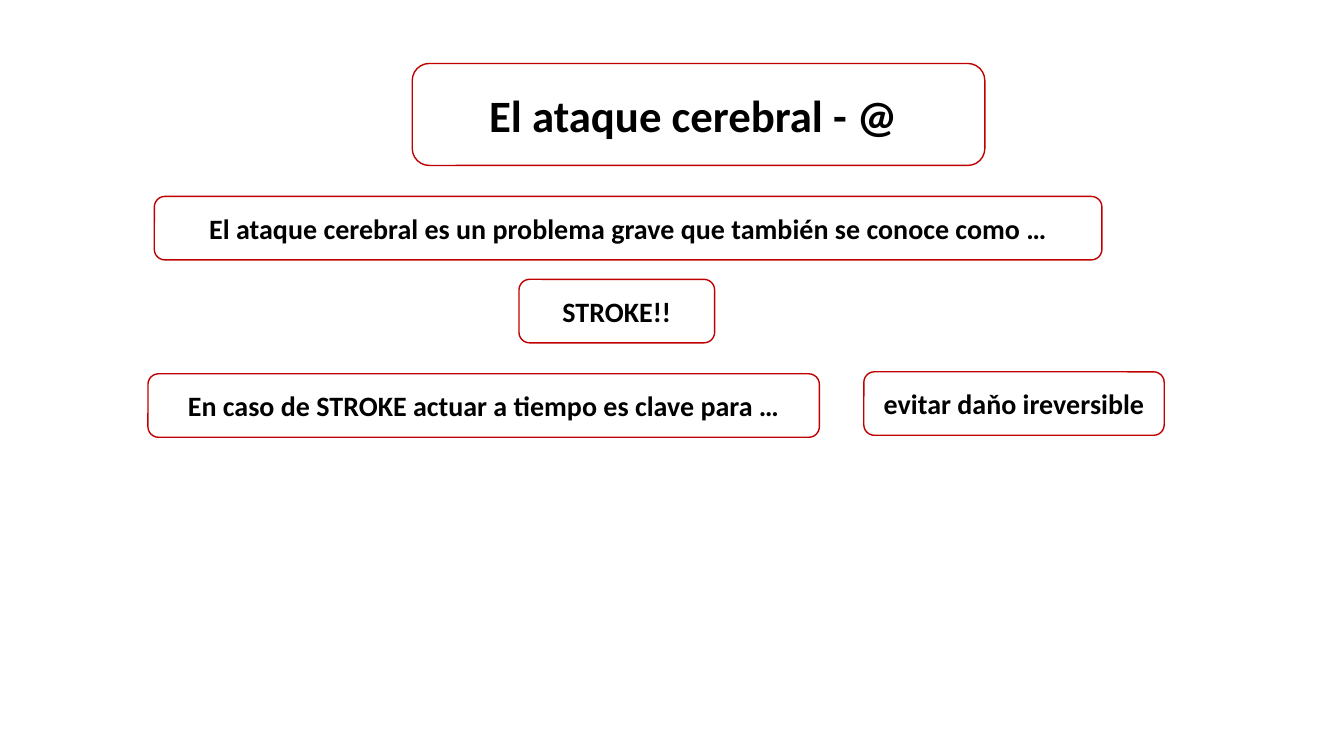
"""Build the slide on recognising and acting on a stroke."""
import pptx
import pptx.dml.color
import pptx.enum.shapes
import pptx.enum.text
import pptx.util
from pptx.util import Cm

THEME = {
    "font": "Calibri",
    "ink": pptx.dml.color.RGBColor.from_string("000000"),
    "paper": pptx.dml.color.RGBColor.from_string("FFFFFF"),
    "border": pptx.dml.color.RGBColor.from_string("C00000"),
    "border_width": pptx.util.Pt(1),
    "title": pptx.util.Pt(32),
    "body": pptx.util.Pt(20),
}
STATEMENT_HEIGHT = 1.6

presentation = pptx.Presentation()
presentation.slide_width = Cm(33.87)
presentation.slide_height = Cm(19.05)
slide = presentation.slides.add_slide(presentation.slide_layouts[6])

statements = [
    ("El ataque cerebral - @ ", "title", 10.39, 1.6, 14.43, 2.57),
    ("El ataque cerebral es un problema grave que también se conoce como …",
     "body", 3.89, 4.95, 23.88, STATEMENT_HEIGHT),
    ("STROKE!!", "body", 13.08, 7.04, 4.93, STATEMENT_HEIGHT),
    ("En caso de STROKE actuar a tiempo es clave para …",
     "body", 3.73, 9.42, 16.92, STATEMENT_HEIGHT),
    ("evitar daňo ireversible", "body", 21.77, 9.37, 7.57, STATEMENT_HEIGHT),
]

for wording, level, left, top, width, height in statements:
    statement = slide.shapes.add_shape(
        pptx.enum.shapes.MSO_SHAPE.ROUNDED_RECTANGLE,
        Cm(left), Cm(top), Cm(width), Cm(height))
    statement.shadow.inherit = False
    statement.fill.solid()
    statement.fill.fore_color.rgb = THEME["paper"]
    statement.line.color.rgb = THEME["border"]
    statement.line.width = THEME["border_width"]
    statement.text_frame.vertical_anchor = pptx.enum.text.MSO_ANCHOR.MIDDLE
    paragraph = statement.text_frame.paragraphs[0]
    paragraph.alignment = pptx.enum.text.PP_ALIGN.CENTER
    phrase = paragraph.add_run()
    phrase.text = wording
    lettering = {"name": THEME["font"], "size": THEME[level], "bold": True}
    for attribute, value in lettering.items():
        setattr(phrase.font, attribute, value)
    phrase.font.color.rgb = THEME["ink"]

presentation.save("out.pptx")
